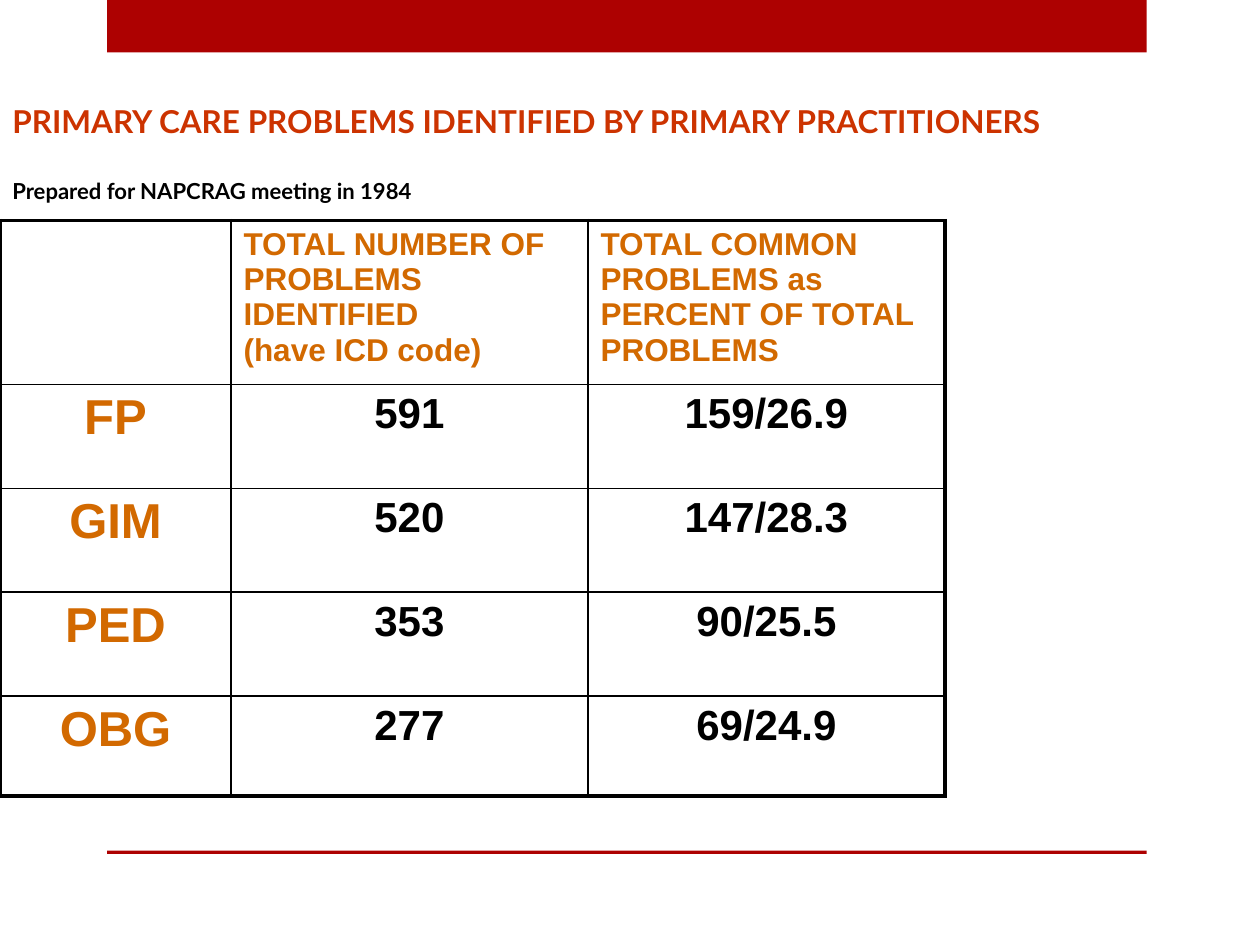
from lxml.etree import SubElement
from pptx import Presentation
from pptx.dml.color import RGBColor
from pptx.enum.shapes import MSO_SHAPE as Shape
from pptx.enum.text import MSO_ANCHOR as Anchor, PP_ALIGN as Align
from pptx.oxml import parse_xml
from pptx.oxml.ns import nsdecls, qn
from pptx.util import Pt

RED = "AD0101"
TITLE_RED = "CC3300"
ORANGE = "D26900"
BLACK = "000000"

COLUMN_WIDTHS = [132, 204, 204]
ROW_HEIGHTS = [93.6, 59.4, 59.4, 59.4, 57.2]
HEADERS = [
    [],
    ["TOTAL NUMBER OF PROBLEMS IDENTIFIED", "(have ICD code)"],
    ["TOTAL COMMON PROBLEMS as PERCENT OF TOTAL PROBLEMS"],
]
PRACTICES = [
    ("FP", "591", "159/26.9"),
    ("GIM", "520", "147/28.3"),
    ("PED", "353", "90/25.5"),
    ("OBG", "277", "69/24.9"),
]


def color(value):
    return RGBColor.from_string(value)


def add_bar(page, left, top, width, height):
    bar = page.shapes.add_shape(
        Shape.RECTANGLE, Pt(left), Pt(top), Pt(width), Pt(height))
    bar.shadow.inherit = False
    bar.fill.solid()
    bar.fill.fore_color.rgb = color(RED)
    bar.line.fill.background()


def add_span(para, text, size, ink, font):
    span = para.add_run()
    span.text = text
    span.font.size = Pt(size)
    span.font.name = font
    span.font.bold = True
    span.font.color.rgb = color(ink)


def add_title(page):
    box = page.shapes.add_textbox(Pt(0), Pt(30), Pt(648), Pt(90))
    frame = box.text_frame
    frame.word_wrap = True
    frame.vertical_anchor = Anchor.BOTTOM
    heading = frame.paragraphs[0]
    add_span(heading, "PRIMARY CARE PROBLEMS IDENTIFIED BY PRIMARY PRACTITIONERS",
             18, TITLE_RED, "Lato")
    subtitle = frame.add_paragraph()
    subtitle.space_before = Pt(21.6)
    add_span(subtitle, "Prepared for NAPCRAG meeting in 1984", 12.6, BLACK, "Lato")


def set_borders(cell, widths):
    properties = cell._tc.get_or_add_tcPr()
    for position, (side, width) in enumerate(zip("LRTB", widths)):
        border = parse_xml(f'<a:ln{side} {nsdecls("a")} w="{Pt(width)}"/>')
        fill = SubElement(border, qn("a:solidFill"))
        SubElement(fill, qn("a:srgbClr"), val=BLACK)
        properties.insert(position, border)


def write_cell(cell, lines, size, ink, align):
    para = cell.text_frame.paragraphs[0]
    para.alignment = align
    for number, line in enumerate(lines):
        if number:
            para.add_line_break()
        add_span(para, line, size, ink, "Arial")


def add_problem_table(page):
    frame = page.shapes.add_table(
        len(ROW_HEIGHTS), len(COLUMN_WIDTHS), Pt(0), Pt(126),
        Pt(sum(COLUMN_WIDTHS)), Pt(sum(ROW_HEIGHTS)))
    table = frame.table
    table.first_row = False
    table.horz_banding = False
    for column, width in zip(table.columns, COLUMN_WIDTHS):
        column.width = Pt(width)
    for row, height in zip(table.rows, ROW_HEIGHTS):
        row.height = Pt(height)

    last_row, last_column = len(ROW_HEIGHTS) - 1, len(COLUMN_WIDTHS) - 1
    for r in range(len(ROW_HEIGHTS)):
        for c in range(len(COLUMN_WIDTHS)):
            cell = table.cell(r, c)
            cell.fill.background()
            outer = (c == 0, c == last_column, r == 0, r == last_row)
            set_borders(cell, [2.25 if edge else 1 for edge in outer])
            if r == 0:
                write_cell(cell, HEADERS[c], 18, ORANGE, Align.LEFT)
            else:
                size, ink = (28, ORANGE) if c == 0 else (24, BLACK)
                write_cell(cell, [PRACTICES[r - 1][c]], size, ink, Align.CENTER)


def main():
    deck = Presentation()
    deck.slide_width, deck.slide_height = Pt(720), Pt(540)
    page = deck.slides.add_slide(deck.slide_layouts[6])
    add_bar(page, 61.2, 0, 594, 30)
    add_bar(page, 61.2, 486, 594, 2)
    add_title(page)
    add_problem_table(page)
    deck.save("out.pptx")


if __name__ == "__main__":
    main()
